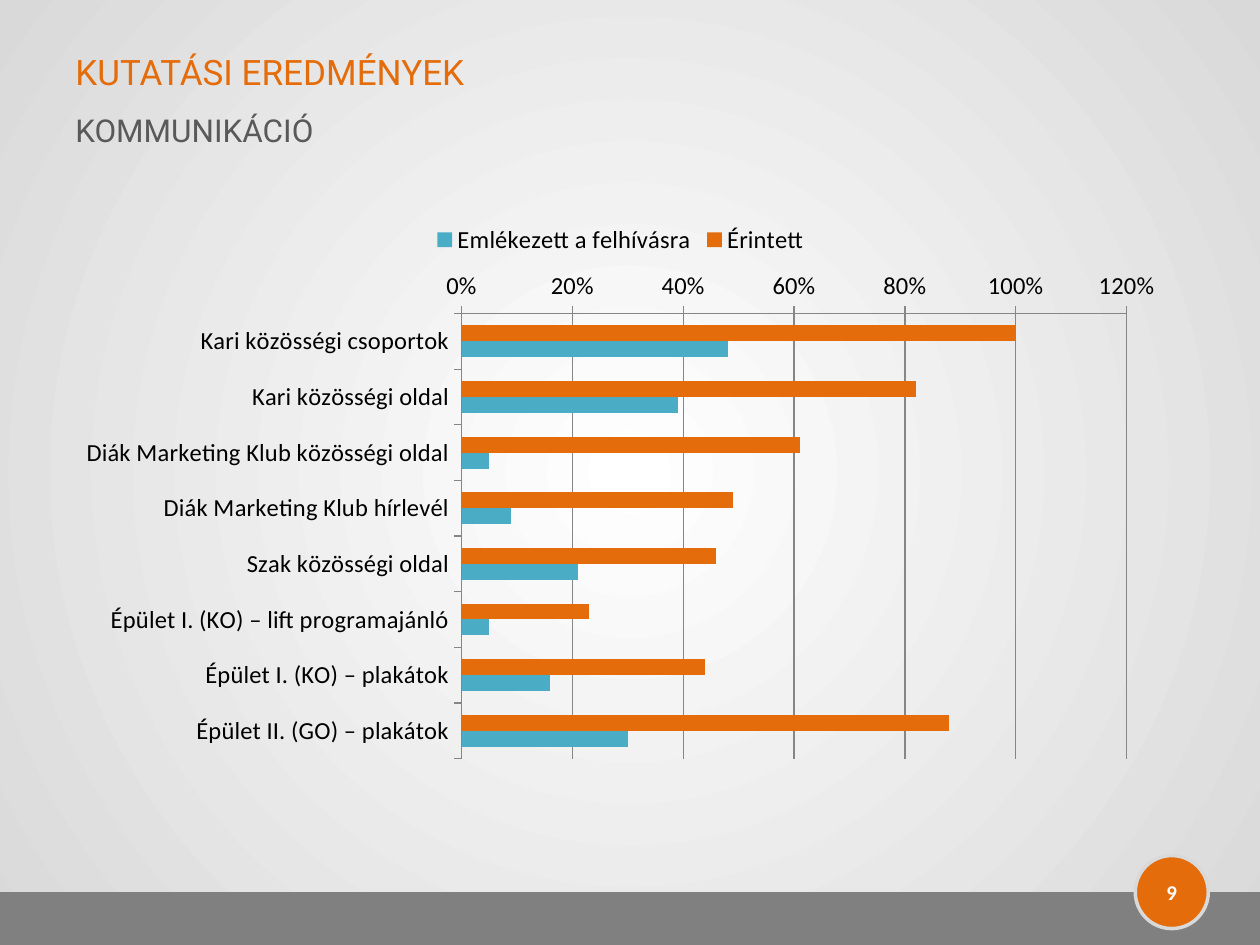
from lxml import etree
from pptx import Presentation
from pptx.chart.data import CategoryChartData
from pptx.dml.color import RGBColor
from pptx.enum.chart import XL_CHART_TYPE, XL_LEGEND_POSITION, XL_TICK_MARK
from pptx.enum.shapes import MSO_SHAPE
from pptx.enum.text import MSO_ANCHOR, PP_ALIGN
from pptx.oxml.ns import qn
from pptx.util import Inches, Pt

ORANGE = RGBColor(0xE4, 0x6C, 0x0A)
TEAL = RGBColor(0x4B, 0xAC, 0xC6)
WHITE = RGBColor(0xFF, 0xFF, 0xFF)
BLACK = RGBColor(0, 0, 0)
LIGHT_GREY = RGBColor(0xD9, 0xD9, 0xD9)
AXIS_GREY = RGBColor(0x86, 0x86, 0x86)
BAND_GREY = RGBColor(0x80, 0x80, 0x80)
TEXT_GREY = RGBColor(0x59, 0x59, 0x59)

CATEGORIES = [
    "Kari közösségi csoportok",
    "Kari közösségi oldal",
    "Diák Marketing Klub közösségi oldal",
    "Diák Marketing Klub hírlevél",
    "Szak közösségi oldal",
    "Épület I. (KO) – lift programajánló",
    "Épület I. (KO) – plakátok",
    "Épület II. (GO) – plakátok",
]
SERIES = [
    ("Érintett", ORANGE, [1, 0.82, 0.61, 0.49, 0.46, 0.23, 0.44, 0.88]),
    ("Emlékezett a felhívásra", TEAL, [0.48, 0.39, 0.05, 0.09, 0.21, 0.05, 0.16, 0.3]),
]


def add_text(slide, text, left, top, width, height, *, size, color, font="Roboto",
             bold=False, align=PP_ALIGN.LEFT, anchor=MSO_ANCHOR.MIDDLE, space_before=0):
    box = slide.shapes.add_textbox(Inches(left), Inches(top), Inches(width), Inches(height))
    frame = box.text_frame
    frame.word_wrap = True
    frame.vertical_anchor = anchor
    paragraph = frame.paragraphs[0]
    paragraph.alignment = align
    paragraph.space_before = Pt(space_before)
    run = paragraph.add_run()
    run.text = text
    run.font.name = font
    run.font.size = Pt(size)
    run.font.bold = bold
    run.font.color.rgb = color


def add_filled_shape(slide, kind, left, top, width, height, fill, line=None):
    shape = slide.shapes.add_shape(kind, Inches(left), Inches(top), Inches(width), Inches(height))
    shape.shadow.inherit = False
    shape.fill.solid()
    shape.fill.fore_color.rgb = fill
    if line is None:
        shape.line.fill.background()
    else:
        shape.line.color.rgb = line
        shape.line.width = Pt(2)


def set_background(slide):
    """Radial gradient, white in the middle of the slide."""
    fill = slide.background.fill
    fill.gradient()
    for stop, color, position in zip(fill.gradient_stops, (WHITE, LIGHT_GREY), (0, 1)):
        stop.color.rgb = color
        stop.position = position
    gradient = slide.element.find(".//" + qn("a:gradFill"))
    gradient.remove(gradient.find(qn("a:lin")))
    circle = etree.SubElement(gradient, qn("a:path"), path="circle")
    etree.SubElement(circle, qn("a:fillToRect"), l="50000", t="50000", r="50000", b="50000")


def add_header(slide, left, top, width):
    add_text(slide, "KUTATÁSI EREDMÉNYEK", left, top, width, 0.53, size=20, color=ORANGE)
    add_text(slide, "KOMMUNIKÁCIÓ", left, top + 0.53, width, 0.5, size=18, color=TEXT_GREY,
             anchor=MSO_ANCHOR.TOP, space_before=3.6)


def add_footer(slide, left, top, width, height):
    """Grey band with the page number in a badge near its right end."""
    add_filled_shape(slide, MSO_SHAPE.RECTANGLE, left, top, width, height, BAND_GREY)
    badge_left, badge_size = left + width - 0.99, 0.58
    add_filled_shape(slide, MSO_SHAPE.OVAL, badge_left, top - badge_size / 2,
                     badge_size, badge_size, ORANGE, LIGHT_GREY)
    add_text(slide, "9", badge_left, top - 0.2, badge_size, 0.4, size=12, color=WHITE,
             font="Calibri", bold=True, align=PP_ALIGN.CENTER)


def add_reach_chart(slide, left, top, width, height):
    data = CategoryChartData(number_format="0%")
    data.categories = CATEGORIES
    for name, _, values in SERIES:
        data.add_series(name, values)
    chart = slide.shapes.add_chart(XL_CHART_TYPE.BAR_CLUSTERED, Inches(left), Inches(top),
                                   Inches(width), Inches(height), data).chart
    chart.has_title = False
    chart.font.name = "Calibri"
    chart.font.size = Pt(14)
    chart.font.color.rgb = BLACK

    chart.has_legend = True
    chart.legend.position = XL_LEGEND_POSITION.TOP
    chart.legend.include_in_layout = False

    plot = chart.plots[0]
    plot.gap_width = 150
    plot.overlap = 0
    plot.vary_by_categories = False
    for series, (_, color, _) in zip(plot.series, SERIES):
        series.format.fill.solid()
        series.format.fill.fore_color.rgb = color
        series.invert_if_negative = False

    for axis in (chart.category_axis, chart.value_axis):
        axis.major_tick_mark = XL_TICK_MARK.OUTSIDE
        axis.minor_tick_mark = XL_TICK_MARK.NONE
        axis.format.line.color.rgb = AXIS_GREY
        axis.format.line.width = Pt(0.75)
    chart.category_axis.reverse_order = True
    chart.category_axis.has_major_gridlines = False

    value_axis = chart.value_axis
    value_axis.minimum_scale = 0
    value_axis.maximum_scale = 1.2
    value_axis.major_unit = 0.2
    value_axis.has_major_gridlines = True
    value_axis.major_gridlines.format.line.color.rgb = AXIS_GREY
    value_axis.major_gridlines.format.line.width = Pt(0.75)
    value_axis.tick_labels.number_format = "0%"
    value_axis.tick_labels.number_format_is_linked = False


def main():
    presentation = Presentation()
    presentation.slide_width = Inches(10)
    presentation.slide_height = Inches(7.5)
    slide = presentation.slides.add_slide(presentation.slide_layouts[6])
    set_background(slide)
    add_footer(slide, 0, 7.08, 10, 0.42)
    add_header(slide, 0.5, 0.3, 9)
    add_reach_chart(slide, 0.51, 1.67, 8.83, 4.44)
    presentation.save("out.pptx")


if __name__ == "__main__":
    main()
